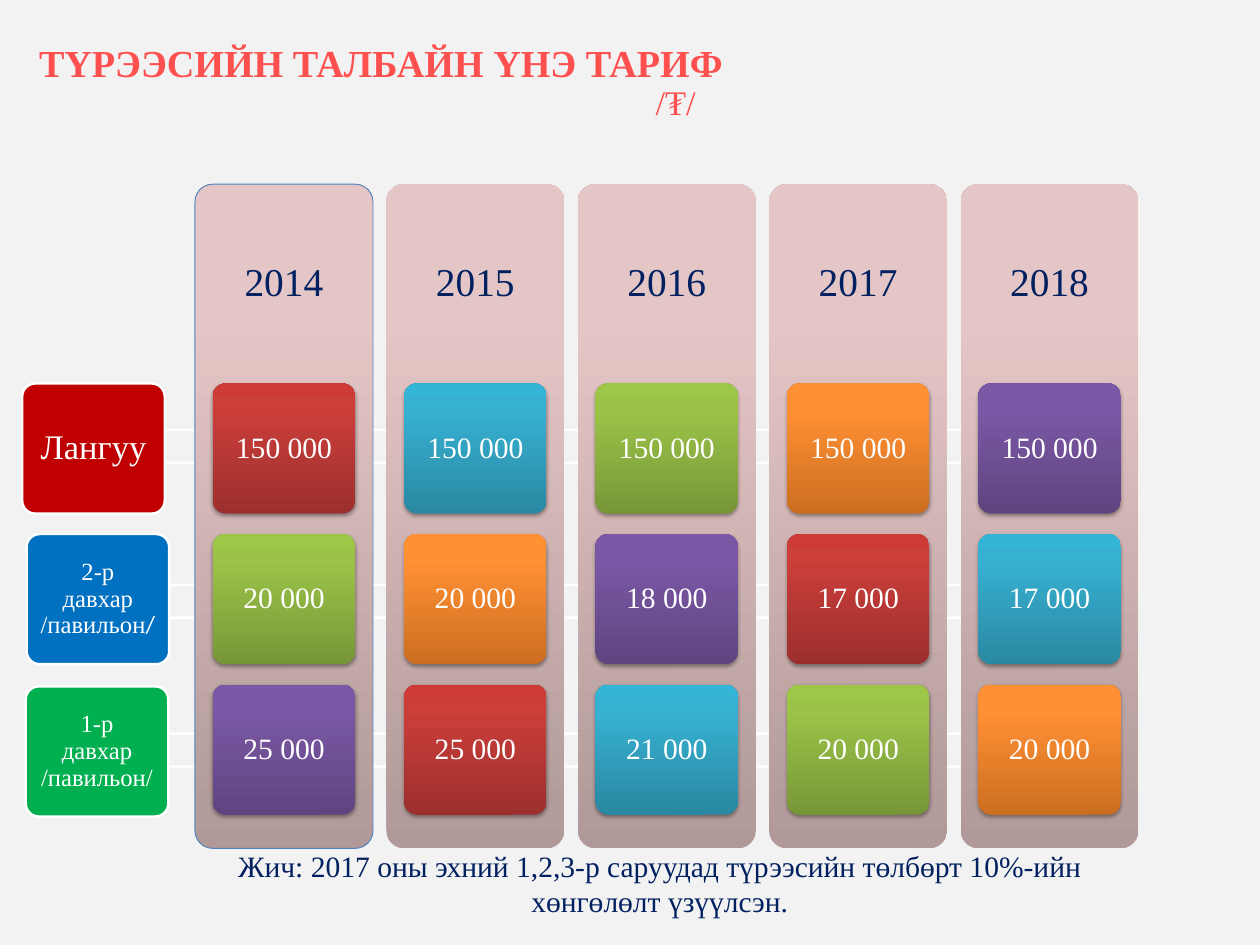
"""Builds the slide with the rental price tariff by year."""
from copy import deepcopy

from lxml.etree import SubElement
from pptx import Presentation
from pptx.dml.color import RGBColor
from pptx.enum.shapes import MSO_SHAPE
from pptx.enum.text import MSO_ANCHOR, MSO_AUTO_SIZE, PP_ALIGN
from pptx.oxml.ns import qn
from pptx.util import Inches, Pt

rgb = RGBColor.from_string
SERIF = "Times New Roman"
COL_X, COL_Y, COL_W, COL_H, COL_STEP = 2.2, 2.08, 2.01, 7.5, 2.16
TILE_DX, TILE_Y, TILE_W, TILE_H, TILE_STEP = 0.2, 4.33, 1.61, 1.47, 1.7
HEAD_H = TILE_Y - COL_Y

COLUMN = ("B09998", "E5C6C6", "E6C7C6")
RED = ("9C2F2D", "CB3E3A", "CE3B37")
CYAN = ("2A88A2", "37B1D2", "34B4D6")
GREEN = ("779737", "9BC348", "9DC746")
ORANGE = ("CC6E20", "FF9034", "FF9136")
PURPLE = ("5F4480", "7B58A6", "7C57A8")
CYCLE = (RED, CYAN, GREEN, ORANGE, PURPLE)

YEARS = ("2014", "2015", "2016", "2017", "2018")
PRICES = (
    ("150 000", "150 000", "150 000", "150 000", "150 000"),
    ("20 000", "20 000", "18 000", "17 000", "17 000"),
    ("25 000", "25 000", "21 000", "20 000", "20 000"),
)
LABELS = (
    ("Лангуу", "", 28, "C00000", 0.25, 4.33),
    ("2-р\vдавхар\v/павильон", "/", 20, "0070C0", 0.3, 6.03),
    ("1-р\vдавхар\v/павильон/", "", 20, "00B050", 0.29, 7.75),
)
ARROWS = ((6.97, 8.47), (6.8, 6.79), (7.01, 5.04))


def add_box(kind, x, y, w, h, fill=(), line=None, width=2):
    sp = s.shapes.add_shape(kind, Inches(x), Inches(y), Inches(w), Inches(h))
    sp.shadow.inherit = False
    if len(fill) == 3:
        sp.fill.gradient()
        sp.fill.gradient_angle = 90
        gs = sp._element.spPr.findall(".//" + qn("a:gs"))[-1]
        gs.addnext(deepcopy(gs))
        for stop, color, pos in zip(sp.fill.gradient_stops, fill, (0, 0.8, 1)):
            stop.color.rgb, stop.position = rgb(color), pos
    elif fill:
        sp.fill.solid()
        sp.fill.fore_color.rgb = rgb(fill[0])
    else:
        sp.fill.background()
    if line:
        sp.line.color.rgb = rgb(line)
        sp.line.width = Pt(width)
    else:
        sp.line.fill.background()
    if kind == MSO_SHAPE.ROUNDED_RECTANGLE:
        sp.adjustments[0] = 0.1
    return sp


def write(sp, text, size, color, inset=(0.1, 0.1, 0.1, 0.1), spacing=0.9):
    tf = sp.text_frame
    tf.text = text
    sides = ("margin_left", "margin_top", "margin_right", "margin_bottom")
    frame = dict(zip(sides, map(Inches, inset)), word_wrap=True,
                 auto_size=MSO_AUTO_SIZE.NONE, vertical_anchor=MSO_ANCHOR.MIDDLE)
    for name, value in frame.items():
        setattr(tf, name, value)
    for p in tf.paragraphs:
        p.alignment, p.line_spacing, p.space_before = PP_ALIGN.CENTER, spacing, Pt(0)
        for r in p.runs:
            for name, value in {"name": SERIF, "size": Pt(size), "bold": False}.items():
                setattr(r.font, name, value)
            r.font.color.rgb = rgb(color)
    return tf


prs = Presentation()
prs.slide_width, prs.slide_height = Inches(14.22), Inches(10.67)
s = prs.slides.add_slide(prs.slide_layouts[1])
s.background.fill.solid()
s.background.fill.fore_color.rgb = rgb("F2F2F2")

title, note = s.placeholders
for sp, at in ((title, (0.25, 0.4, 12.61, 1.1)), (note, (1.78, 9.42, 11.33, 1.1))):
    sp.left, sp.top, sp.width, sp.height = map(Inches, at)

tf = write(title, "ТҮРЭЭСИЙН ТАЛБАЙН ҮНЭ ТАРИФ\n/₮/", 31, "FF5050", (0.14, 0.07, 0.14, 0.07))
for p, indent, size, bold in zip(tf.paragraphs, (0.05, 7.01), (31, 28), (True, False)):
    p.alignment = PP_ALIGN.LEFT
    p._p.get_or_add_pPr().set("marL", str(Inches(indent)))
    p.runs[0].font.size, p.runs[0].font.bold = Pt(size), bold

tf = write(note, "Жич: 2017 оны эхний 1,2,3-р саруудад түрээсийн төлбөрт 10%-ийн "
           "хөнгөлөлт үзүүлсэн.", 24, "002060", (0.2, 0.07, 0.2, 0.07), 1.0)
pPr = tf.paragraphs[0]._p.get_or_add_pPr()
pPr.set("marL", "0")
pPr.set("indent", "0")
SubElement(pPr, qn("a:buNone"))

for cx, cy in ARROWS:
    sp = add_box(MSO_SHAPE.UP_ARROW, cx - 0.37, cy - 5.19, 0.74, 10.38, line="FFFFFF")
    sp.adjustments[0], sp.adjustments[1] = 0.5, 0.35
    sp.rotation = 90

for i, year in enumerate(YEARS):
    x = COL_X + i * COL_STEP
    sp = add_box(MSO_SHAPE.ROUNDED_RECTANGLE, x, COL_Y, COL_W, COL_H, COLUMN,
                 None if i else "4F81BD", 0.75)
    write(sp, year, 32, "002060", (0.13, 0.13, 0.13, COL_H - HEAD_H + 0.13))
    for j, row in enumerate(PRICES):
        sp = add_box(MSO_SHAPE.ROUNDED_RECTANGLE, x + TILE_DX, TILE_Y + j * TILE_STEP,
                     TILE_W, TILE_H, CYCLE[(i + 2 * j) % len(CYCLE)])
        write(sp, row[i], 24, "FFFFFF")
        effects = sp._element.spPr.find(qn("a:effectLst"))
        shadow = SubElement(effects, qn("a:outerShdw"), blurRad=str(Pt(3.1)),
                            dist=str(Pt(1.8)), dir="5400000", rotWithShape="0")
        black = SubElement(shadow, qn("a:srgbClr"), val="000000")
        SubElement(black, qn("a:alpha"), val="35000")

for text, tail, size, color, x, y in LABELS:
    sp = add_box(MSO_SHAPE.ROUNDED_RECTANGLE, x, y, TILE_W, TILE_H, (color,), "FFFFFF")
    p = write(sp, text, size, "FFFFFF").paragraphs[0]
    if tail:
        r = p.add_run()
        r.text = tail
        r.font.name, r.font.size = "Calibri", Pt(size)
        r.font.color.rgb = rgb("FFFFFF")

prs.save("out.pptx")
